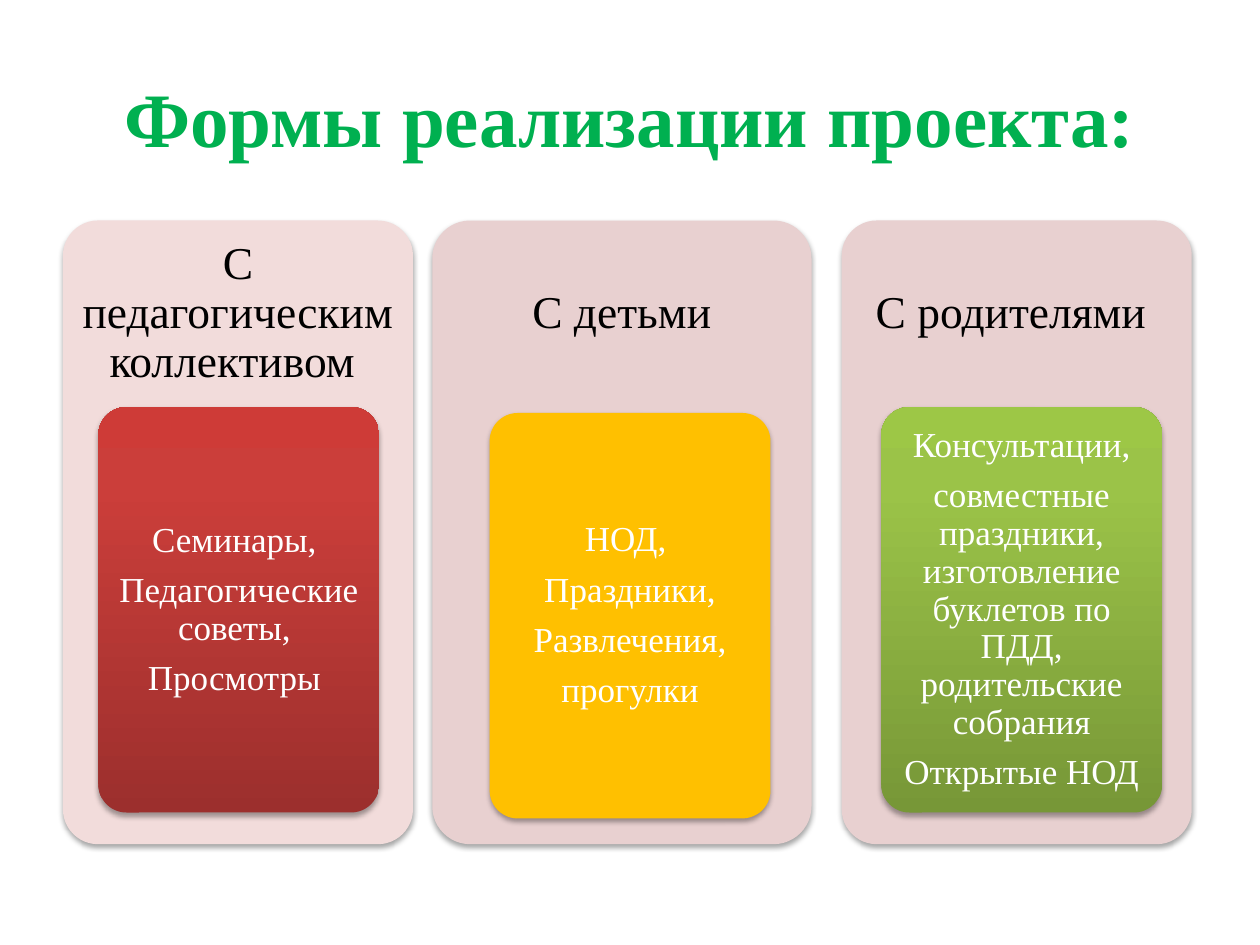
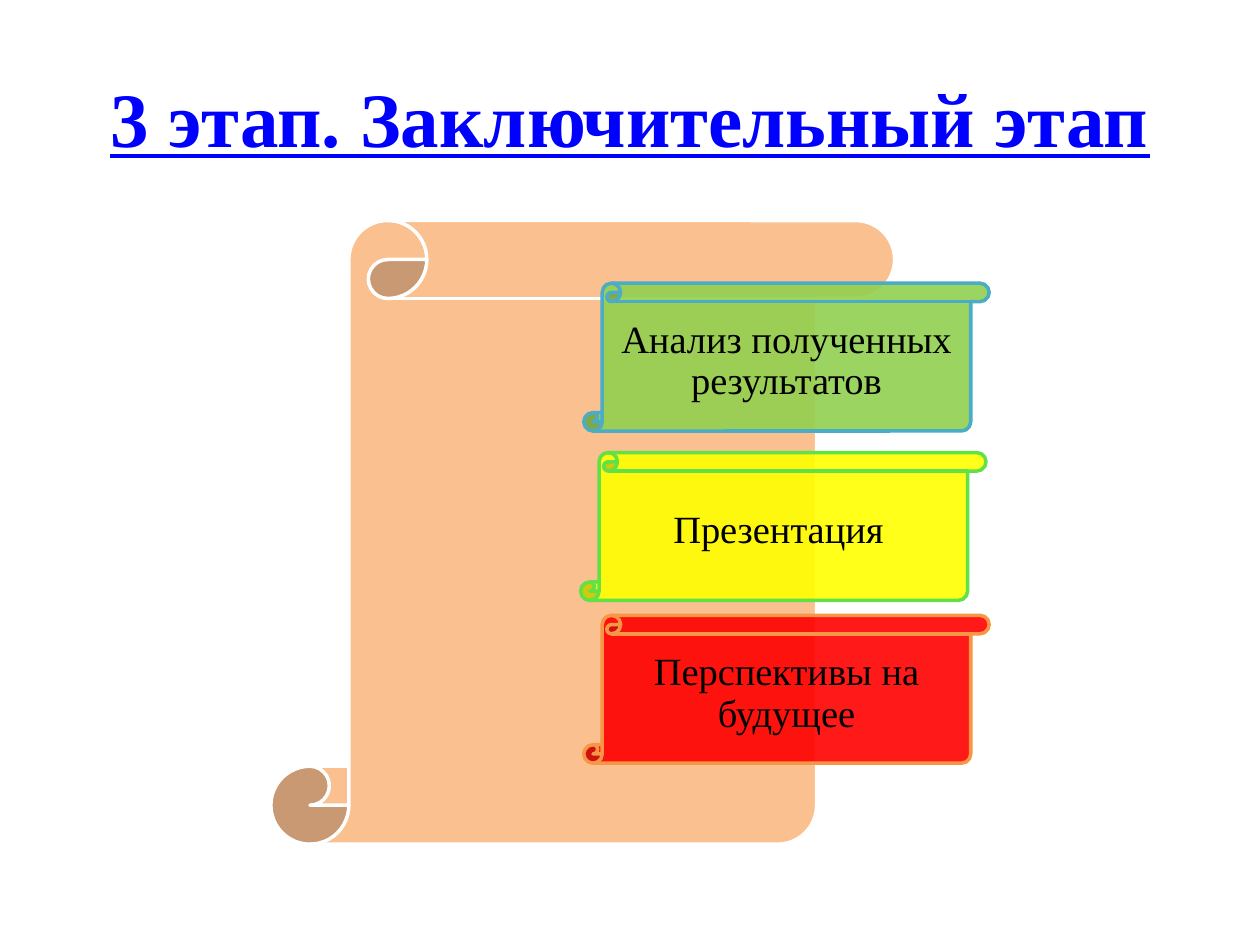
from copy import deepcopy

from pptx import Presentation
from pptx import util as u
from pptx.dml.color import RGBColor
from pptx.enum import shapes, text
from pptx.oxml import ns, xmlchemy

Pt = u.Pt
FONT = "Times New Roman"
C = {
    "green": "00B050", "blue": "0000FF", "black": "000000", "white": "FFFFFF",
    "pink": "F2DCDB", "rose": "E8D0D0", "amber": "FFC000", "peach": "FAC090",
    "lime": "92D050", "yellow": "FFFF00", "red": "FF0000",
    "teal": "4BACC6", "grass": "60E146", "orange": "F79646",
}
RED_GRADIENT = ((0, "9C2F2D"), (0.8, "CB3E3A"), (1, "CE3B37"))
GREEN_GRADIENT = ((0, "779737"), (0.8, "9BC348"), (1, "9DC746"))


def write(tf, lines, size, color, margins, **font):
    frame = {"word_wrap": True, "vertical_anchor": text.MSO_ANCHOR.MIDDLE,
             "margin_left": Pt(margins[0]), "margin_right": Pt(margins[0]),
             "margin_top": Pt(margins[1]), "margin_bottom": Pt(margins[1])}
    for name, value in frame.items():
        setattr(tf, name, value)
    for i, line in enumerate(lines):
        p = tf.add_paragraph() if i else tf.paragraphs[0]
        para = {"alignment": text.PP_ALIGN.CENTER, "line_spacing": 0.9,
                "space_before": Pt(0), "space_after": Pt(size * 0.35)}
        for name, value in para.items():
            setattr(p, name, value)
        r = p.add_run()
        r.text = line
        for name, value in {"name": FONT, "size": Pt(size), **font}.items():
            setattr(r.font, name, value)
        r.font.color.rgb = RGBColor.from_string(C[color])


def add_panel(s, kind, box, fill, line=None, alpha=None, shadow=False):
    sp = s.shapes.add_shape(kind, *map(Pt, box))
    sp.shadow.inherit = False
    spPr = sp._element.spPr
    if isinstance(fill, tuple):
        sp.fill.gradient()
        sp.fill.gradient_angle = 90
        gs_list = spPr.find(".//" + ns.qn("a:gsLst"))
        gs_list.append(deepcopy(gs_list[-1]))
        for stop, (position, color) in zip(sp.fill.gradient_stops, fill):
            stop.position = position
            stop.color.rgb = RGBColor.from_string(color)
    else:
        sp.fill.solid()
        sp.fill.fore_color.rgb = RGBColor.from_string(C[fill])
    if alpha:
        color = spPr.find(ns.qn("a:solidFill"))[0]
        color.append(xmlchemy.OxmlElement("a:alpha"))
        color[0].set("val", str(alpha * 1000))
    if line:
        sp.line.color.rgb = RGBColor.from_string(C[line])
        sp.line.width = Pt(2)
    else:
        sp.line.fill.background()
    if shadow:
        outer = xmlchemy.OxmlElement("a:outerShdw")
        for name, value in {"blurRad": Pt(3.1), "dist": Pt(1.8), "dir": 5400000, "rotWithShape": 0}.items():
            outer.set(name, str(value))
        color = xmlchemy.OxmlElement("a:srgbClr")
        color.set("val", C["black"])
        opacity = xmlchemy.OxmlElement("a:alpha")
        opacity.set("val", "35000")
        color.append(opacity)
        outer.append(color)
        spPr.find(ns.qn("a:effectLst")).append(outer)
    return sp


prs = Presentation()
prs.slide_width, prs.slide_height = Pt(720), Pt(540)

slides = []
for title, color, underline in (("Формы реализации проекта:", "green", None),
                                ("3 этап. Заключительный этап", "blue", True)):
    s = prs.slides.add_slide(prs.slide_layouts[5])
    t = s.shapes.title
    t.left, t.top, t.width, t.height = map(Pt, (36, 21.6, 648, 90))
    write(t.text_frame, [title], 44, color, (7.2, 3.6), bold=True, underline=underline)
    p = t.text_frame.paragraphs[0]
    p.line_spacing, p.space_after = 1.0, Pt(0)
    slides.append(s)
forms, final = slides

CARD_TOP, CARD_H, HEAD_H = 126, 356.4, 106.8
cards = (
    ("С педагогическим коллективом ", 36, 200, "pink", 56.2, 232.6, RED_GRADIENT,
     ("Семинары, ", "Педагогические советы, ", "Просмотры ")),
    ("С детьми", 247, 216.7, "rose", 279.8, 236, "amber",
     ("НОД, ", "Праздники,", "Развлечения,", "прогулки")),
    ("С родителями ", 481, 200, "rose", 503.6, 232.6, GREEN_GRADIENT,
     ("Консультации,",
      "совместные праздники, изготовление буклетов по ПДД, родительские собрания",
      "Открытые НОД")),
)
ROUND = shapes.MSO_SHAPE.ROUNDED_RECTANGLE
for head, left, width, fill, inner_left, inner_top, inner_fill, lines in cards:
    card = add_panel(forms, ROUND, (left, CARD_TOP, width, CARD_H), fill, shadow=True)
    tb = forms.shapes.add_textbox(*map(Pt, (left, CARD_TOP, width, HEAD_H)))
    write(tb.text_frame, [head], 26, "black", (7.8, 7.8))
    inner = add_panel(forms, ROUND, (inner_left, inner_top, 160.5, 231.7), inner_fill, shadow=True)
    for sp in (card, inner):
        sp.adjustments[0] = 0.1
    write(inner.text_frame, lines, 20, "white", (4, 3))

SCROLL = shapes.MSO_SHAPE.VERTICAL_SCROLL
add_panel(final, SCROLL, (154.8, 126, 356.4, 356.4), "peach", "white")
for line, left, top, fill, edge in (
    ("Анализ полученных результатов", 333.6, 161.8, "lime", "teal"),
    ("Презентация ", 331.8, 258.6, "yellow", "grass"),
    ("Перспективы на будущее", 333.6, 351.6, "red", "orange"),
):
    sp = add_panel(final, SCROLL, (left, top, 231.7, 84.5), fill, edge, alpha=90)
    write(sp.text_frame, [line], 22, "black", (6.6, 6.6))

prs.save("out.pptx")
